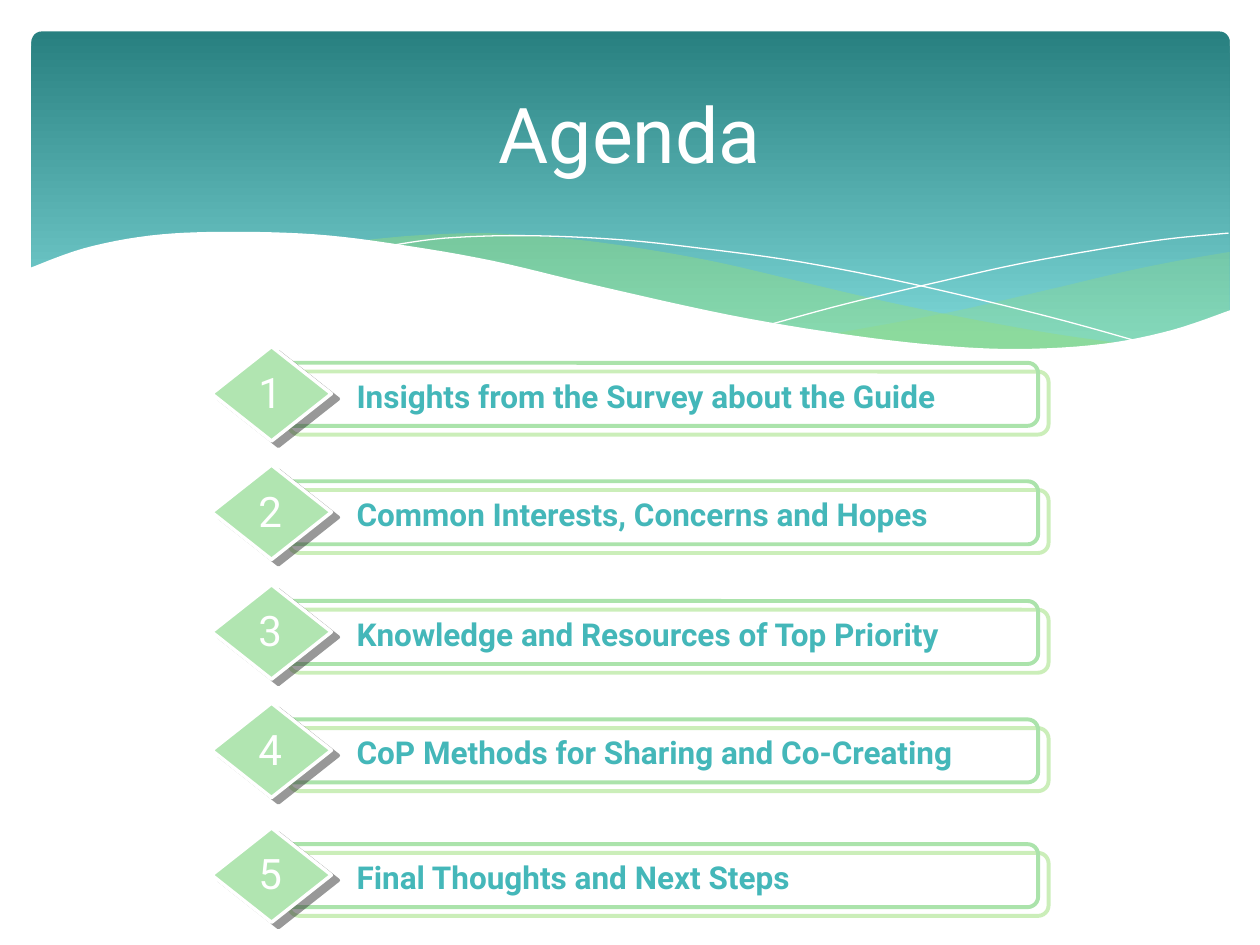
from dataclasses import dataclass

from lxml import etree
from pptx import Presentation
from pptx import util as u
from pptx.dml.color import RGBColor
from pptx.enum import shapes, text
from pptx.oxml.ns import qn


@dataclass(frozen=True)
class Theme:
    font: str = "Roboto"
    deep: str = "288080"
    light: str = "7CD6D6"
    leaf: str = "99DE75"
    edge: str = "ABE3AB"
    gem: str = "B1E5B1"
    ink: str = "44B7B9"
    dark: str = "333333"
    white: str = "FFFFFF"
    head: int = 44
    digit: int = 24
    body: int = 18


THEME = Theme()
KIND = shapes.MSO_SHAPE
ALIGN = text.PP_ALIGN

WAVES = [
    ([[(9.76, 2), (9.35, 2.07), (8.91, 2.16), (8.32, 2.3), (7.53, 2.48), (6.61, 2.65)],
      [(6.61, 2.65), (7.19, 2.72), (7.69, 2.77), (8.14, 2.78), (8.63, 2.75),
       (9.05, 2.69), (9.42, 2.59), (9.76, 2.47)]], THEME.leaf, 29),
    ([[(8.93, 2.73), (8.37, 2.65), (7.75, 2.54), (7.06, 2.4), (6.29, 2.22), (5.69, 2.08),
       (5.14, 1.98), (4.65, 1.91), (4.2, 1.87), (3.8, 1.85), (3.28, 1.87), (2.86, 1.91)],
      [(2.86, 1.91), (3.42, 1.99), (4.04, 2.11), (4.91, 2.32), (5.66, 2.48), (6.34, 2.61),
       (6.95, 2.7), (7.48, 2.76), (8.07, 2.78), (8.57, 2.77), (8.93, 2.73)]], THEME.leaf, 40),
    ([[(3.09, 1.95), (3.53, 1.89), (4.16, 1.87), (4.89, 1.9), (5.56, 1.97), (6.36, 2.08),
       (7.27, 2.26), (8.31, 2.51), (9.07, 2.72)]], None, 100),
    ([[(6.13, 2.57), (6.72, 2.41), (7.48, 2.23), (8.06, 2.1), (8.66, 1.99),
       (9.24, 1.9), (9.75, 1.85)]], None, 100),
    ([[(9.77, 2.46), (9.3, 2.62), (8.75, 2.73), (8.09, 2.77), (7.44, 2.74), (6.68, 2.65),
       (5.79, 2.5), (4.75, 2.27), (3.91, 2.07), (3.16, 1.94), (2.5, 1.86), (1.77, 1.84),
       (1.19, 1.87), (0.67, 1.97), (0.23, 2.13)],
      [(0.23, 3.29), (9.77, 3.29)]], THEME.white, 100),
]

ITEMS = [
    (2.75, "Insights from the Survey about the Guide"),
    (3.69, "Common Interests, Concerns and Hopes"),
    (4.64, "Knowledge and Resources of Top Priority"),
    (5.58, "CoP Methods for Sharing and Co-Creating"),
    (6.57, "Final Thoughts and Next Steps"),
]


def rgb(code):
    return RGBColor.from_string(code)


def lengths(box):
    return [u.Inches(n) for n in box]


def fade(color, share):
    etree.SubElement(color, qn("a:alpha"), val=str(share * 1000))


def paint(shape, fill=None, line=None, width=0):
    shape.shadow.inherit = False
    if fill:
        shape.fill.solid()
        shape.fill.fore_color.rgb = rgb(fill)
    else:
        shape.fill.background()
    if line:
        shape.line.color.rgb = rgb(line)
        shape.line.width = u.Pt(width)
    else:
        shape.line.fill.background()


def shade(shape, code, dist, angle):
    effects = shape._element.spPr.find(qn("a:effectLst"))
    outer = etree.SubElement(effects, qn("a:outerShdw"), blurRad="0", dist=str(u.Pt(dist)),
                             dir=str(angle * 60000), algn="ctr", rotWithShape="0")
    fade(etree.SubElement(outer, qn("a:srgbClr"), val=code), 50)


def write(parent, box, words, size, color, align=ALIGN.LEFT, bold=False, wrap=True):
    label = parent.shapes.add_textbox(*lengths(box))
    frame = label.text_frame
    frame.word_wrap = wrap
    para = frame.paragraphs[0]
    para.alignment = align
    run = para.add_run()
    run.text = words
    run.font.name = THEME.font
    run.font.size = u.Pt(size)
    run.font.bold = bold
    run.font.color.rgb = rgb(color)
    return frame


def smooth(points, steps=6):
    if len(points) < 3:
        return points
    ends = [points[0], *points, points[-1]]
    curve = [points[0]]
    for a, b, c, d in zip(ends, ends[1:], ends[2:], ends[3:]):
        for step in range(1, steps + 1):
            t = step / steps
            curve.append(tuple(
                (2 * q + (r - p) * t + (2 * p - 5 * q + 4 * r - s) * t ** 2
                 + (3 * q - p - 3 * r + s) * t ** 3) / 2
                for p, q, r, s in zip(a, b, c, d)))
    return curve


def draw_waves(slide, box):
    left, top = box[:2]
    group = slide.shapes.add_group_shape()
    for parts, fill, share in WAVES:
        dots = [(u.Inches(left + x), u.Inches(top + y))
                for part in parts for x, y in smooth(part)]
        pen = group.shapes.build_freeform(*dots[0])
        pen.add_line_segments(dots[1:], close=bool(fill))
        wave = pen.convert_to_shape()
        paint(wave, fill, None if fill else THEME.white)
        if fill and share < 100:
            fade(wave._element.spPr.find(qn("a:solidFill"))[0], share)


def draw_banner(slide, box):
    left, top, width, height = box
    panel = slide.shapes.add_shape(
        KIND.ROUNDED_RECTANGLE, *lengths((left + 0.25, top + 0.25, width - 0.49, height - 0.6)))
    panel.adjustments[0] = 0.03
    paint(panel)
    panel.fill.gradient()
    panel.fill.gradient_angle = 270
    for stop, code, place in zip(panel.fill.gradient_stops,
                                 (THEME.deep, THEME.light), (0, 0.9)):
        stop.color.rgb = rgb(code)
        stop.position = place
    draw_waves(slide, box)
    frame = write(slide, (left + 0.5, top + 0.37, width - 1, 1.37), "Agenda",
                  THEME.head, THEME.white, ALIGN.CENTER)
    frame.vertical_anchor = text.MSO_ANCHOR.MIDDLE


def draw_item(slide, box, number, words):
    left, top, width, height = box
    group = slide.shapes.add_group_shape()
    bar = group.shapes.add_shape(
        KIND.ROUNDED_RECTANGLE, *lengths((left + 0.53, top + 0.13, width - 0.53, 0.5)))
    paint(bar, line=THEME.edge, width=2.25)
    shade(bar, THEME.leaf, 7.8, 40)
    gem = group.shapes.add_shape(KIND.DIAMOND, *lengths((left, top, 0.95, height)))
    paint(gem, THEME.gem, THEME.white, 2)
    shade(gem, THEME.dark, 5, 37)
    frame = write(group, (left + 0.99, top + 0.19, width - 1.05, 0.4), words,
                  THEME.body, THEME.ink, bold=True)
    frame.margin_left = u.Inches(0.16)
    write(group, (left + 0.27, top + 0.11, 0.39, 0.51), str(number),
          THEME.digit, THEME.white, ALIGN.CENTER, wrap=False)


def main():
    deck = Presentation()
    deck.slide_width, deck.slide_height = u.Inches(10), u.Inches(7.5)
    slide = deck.slides.add_slide(deck.slide_layouts[6])
    draw_banner(slide, (0, 0, 10, 3.3))
    for number, (top, words) in enumerate(ITEMS, 1):
        draw_item(slide, (1.68, top, 6.56, 0.75), number, words)
    deck.save("out.pptx")


if __name__ == "__main__":
    main()
